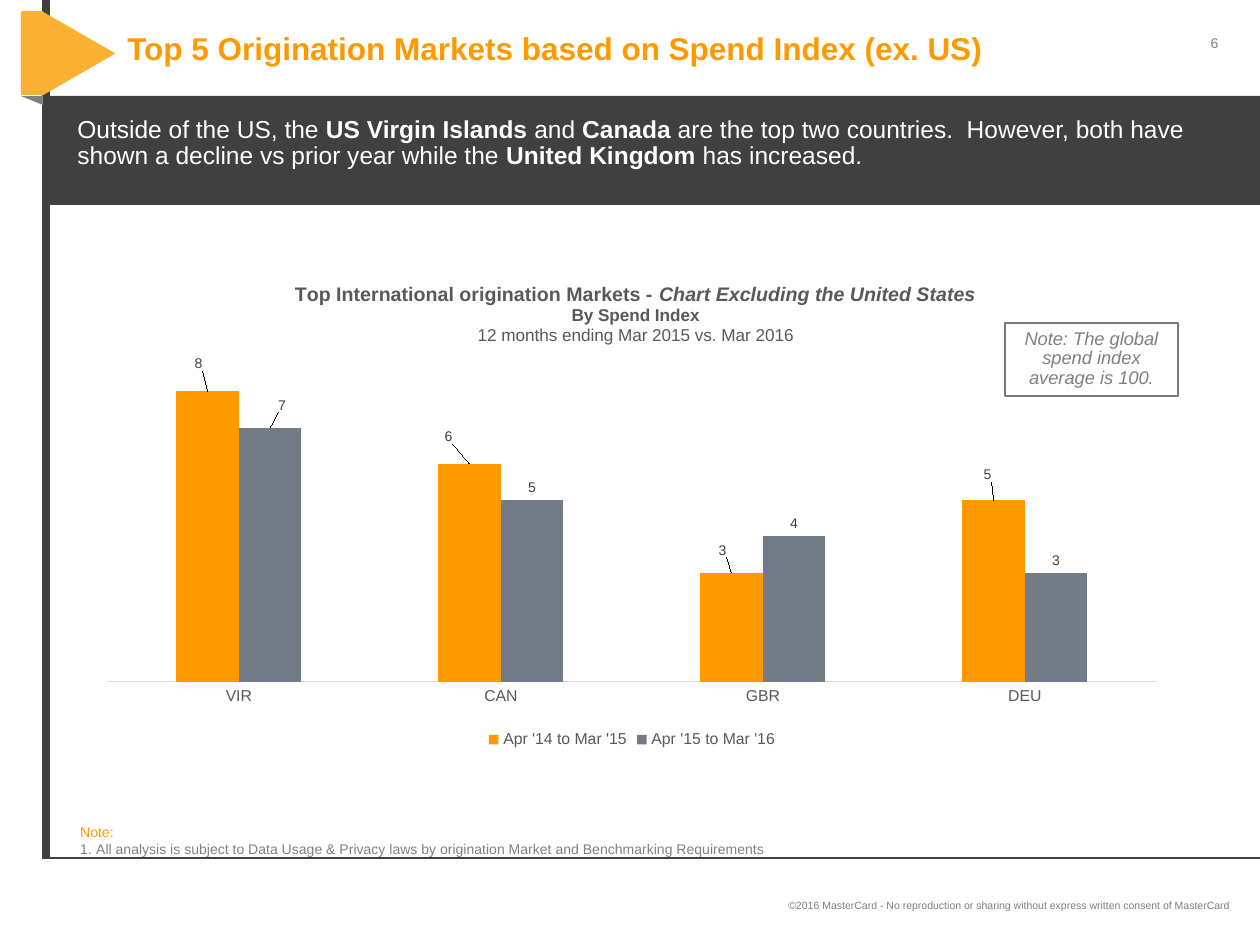
from pptx import Presentation
from pptx.chart.data import CategoryChartData
from pptx.dml.color import RGBColor
from pptx.enum.chart import XL_CHART_TYPE, XL_LABEL_POSITION, XL_LEGEND_POSITION, XL_TICK_MARK
from pptx.enum.shapes import MSO_CONNECTOR, MSO_SHAPE
from pptx.enum.text import MSO_ANCHOR, PP_ALIGN
from pptx.oxml import parse_xml
from pptx.oxml.ns import nsdecls, qn
from pptx.util import Emu, Pt

COLUMNS = XL_CHART_TYPE.COLUMN_CLUSTERED
OUTSIDE_END = XL_LABEL_POSITION.OUTSIDE_END
LEGEND_BOTTOM = XL_LEGEND_POSITION.BOTTOM
NO_TICKS = XL_TICK_MARK.NONE
STRAIGHT = MSO_CONNECTOR.STRAIGHT
RECTANGLE = MSO_SHAPE.RECTANGLE
ROUNDED = MSO_SHAPE.ROUNDED_RECTANGLE
TRIANGLE = MSO_SHAPE.ISOSCELES_TRIANGLE
RIGHT_TRIANGLE = MSO_SHAPE.RIGHT_TRIANGLE
TOP, MIDDLE, BOTTOM = MSO_ANCHOR.TOP, MSO_ANCHOR.MIDDLE, MSO_ANCHOR.BOTTOM
LEFT, CENTER, RIGHT = PP_ALIGN.LEFT, PP_ALIGN.CENTER, PP_ALIGN.RIGHT

PX_PER_INCH = 126
FONT = "Arial"
ORANGE, AMBER, SLATE = "FF9900", "FCB133", "737C86"
DARK, GRAY, TEXT_GRAY, WHITE = "404040", "808080", "595959", "FFFFFF"


def px(length):
    return Emu(round(length * 914400 / PX_PER_INCH))


def color(value):
    return RGBColor.from_string(value)


def style_font(font, size, font_color, bold=False, italic=False):
    font.name, font.size = FONT, Pt(size)
    font.bold, font.italic = bold, italic
    font.color.rgb = color(font_color)


def manual_layout(**values):
    """Chart layout from fractions; x and y alone give an offset or a corner."""
    parts = "".join(f'<c:{name} val="{value}"/>' for name, value in values.items())
    return parse_xml(f'<c:layout {nsdecls("c")}><c:manualLayout>{parts}</c:manualLayout></c:layout>')


class SlideBuilder:
    def __init__(self, slide):
        self.slide = slide

    def shape(self, kind, box, fill=None, line=None, rotation=0):
        shape = self.slide.shapes.add_shape(kind, *map(px, box))
        shape.shadow.inherit = False
        shape.rotation = rotation
        if fill:
            shape.fill.solid()
            shape.fill.fore_color.rgb = color(fill)
        else:
            shape.fill.background()
        if line:
            shape.line.color.rgb = color(line)
            shape.line.width = Pt(0.75)
        else:
            shape.line.fill.background()
        return shape

    def line(self, start, end, line_color):
        connector = self.slide.shapes.add_connector(STRAIGHT, *map(px, start + end))
        connector.line.color.rgb = color(line_color)
        connector.line.width = Pt(0.75)
        connector._element.spPr.append(parse_xml(f'<a:effectLst {nsdecls("a")}/>'))

    def text_box(self, box, *paragraphs, wrap=True, **style):
        text_box = self.slide.shapes.add_textbox(*map(px, box))
        self.fill_text(text_box.text_frame, *paragraphs, **style)
        text_box.text_frame.word_wrap = wrap

    def fill_text(self, frame, *paragraphs, anchor=TOP, align=LEFT, spacing=None):
        """Each paragraph is a list of runs: (text, size, color, bold, italic)."""
        frame.vertical_anchor = anchor
        for index, runs in enumerate(paragraphs):
            paragraph = frame.add_paragraph() if index else frame.paragraphs[0]
            paragraph.alignment = align
            if spacing:
                paragraph.line_spacing = spacing
            for text, *font_style in runs:
                run = paragraph.add_run()
                run.text = text
                style_font(run.font, *font_style)

    def number(self, paragraph, hanging):
        properties = paragraph._p.get_or_add_pPr()
        properties.set("marL", str(px(hanging)))
        properties.set("indent", str(-px(hanging)))
        properties.append(parse_xml(f'<a:buAutoNum {nsdecls("a")} type="arabicPeriod"/>'))

    def column_chart(self, box, categories, series, title, title_corner, plot_box, label_shifts):
        """Shifts move value labels, in px, from their place above the column."""
        left, top, width, height = box
        data = CategoryChartData()
        data.categories = categories
        for name, values, _ in series:
            data.add_series(name, values)
        chart = self.slide.shapes.add_chart(COLUMNS, *map(px, box), data).chart
        style_font(chart.font, 10, "000000")

        chart.has_title = True
        self.fill_text(chart.chart_title.text_frame, *title, align=CENTER)
        chart.has_legend = True
        chart.legend.position = LEGEND_BOTTOM
        chart.legend.include_in_layout = False
        style_font(chart.legend.font, 9, TEXT_GRAY)

        value_axis, category_axis = chart.value_axis, chart.category_axis
        value_axis.minimum_scale, value_axis.maximum_scale = 0, 9
        value_axis.has_major_gridlines = False
        value_axis.visible = False
        category_axis.major_tick_mark = NO_TICKS
        category_axis.format.line.color.rgb = color("D9D9D9")
        category_axis.format.line.width = Pt(0.75)
        style_font(category_axis.tick_labels.font, 9, TEXT_GRAY)

        plot = chart.plots[0]
        plot.vary_by_categories = False
        plot.gap_width, plot.overlap = 219, 0
        for column, (_, _, fill), shifts in zip(plot.series, series, label_shifts):
            column.format.fill.solid()
            column.format.fill.fore_color.rgb = color(fill)
            labels = column.data_labels
            labels.show_value = True
            labels.position = OUTSIDE_END
            style_font(labels.font, 8, DARK)
            for point, (right, down) in shifts.items():
                label = column.points[point].data_label
                style_font(label.font, 8, DARK)
                label.position = OUTSIDE_END
                index = column._element.xpath(f"c:dLbls/c:dLbl/c:idx[@val='{point}']")[0]
                index.addnext(manual_layout(x=round(right / width, 4), y=round(down / height, 4)))

        def replace_layout(element, layout, after):
            for old in element.findall(qn("c:layout")):
                element.remove(old)
            if after is None:
                element.insert(0, layout)
            else:
                after.addnext(layout)

        x, y = title_corner
        title_element = chart.element.xpath("c:chart/c:title")[0]
        replace_layout(title_element, manual_layout(
            xMode="edge", yMode="edge", x=round((x - left) / width, 4),
            y=round((y - top) / height, 4)), title_element.find(qn("c:tx")))
        x, y, plot_width, plot_height = plot_box
        replace_layout(chart.element.xpath("c:chart/c:plotArea")[0], manual_layout(
            layoutTarget="inner", xMode="edge", yMode="edge",
            x=round((x - left) / width, 4), y=round((y - top) / height, 4),
            w=round(plot_width / width, 4), h=round(plot_height / height, 4)), None)


def main():
    presentation = Presentation()
    presentation.slide_width, presentation.slide_height = px(1260), px(945)
    builder = SlideBuilder(presentation.slides.add_slide(presentation.slide_layouts[6]))

    builder.text_box((1193, 28, 43, 30), [("6", 8, GRAY)], wrap=False, align=CENTER)
    builder.text_box(
        (14, 871, 1228, 68),
        [("©2016 MasterCard - No reproduction or sharing without express written consent of MasterCard", 6, GRAY)],
        anchor=MIDDLE, align=RIGHT)

    builder.shape(RECTANGLE, (42, 0, 8, 858), DARK)
    builder.shape(RIGHT_TRIANGLE, (21, 96, 22, 9), GRAY, rotation=180)
    builder.shape(TRIANGLE, (37, 17, 84, 73), AMBER, rotation=90)
    builder.shape(RECTANGLE, (21, 11, 22, 84), AMBER)
    builder.line((42, 858), (1260, 858), DARK)
    builder.shape(RECTANGLE, (50, 96, 1210, 109), DARK)

    builder.text_box((115, 11, 998, 84),
                     [("Top 5 Origination Markets based on Spend Index (ex. US)", 18, ORANGE, True)],
                     anchor=MIDDLE, spacing=Pt(16))
    summary = ("Outside of the US, the ", "US Virgin Islands ", "and ", "Canada",
               " are the top two countries.  However, both have shown a decline vs prior year while the ",
               "United Kingdom ", "has increased.")
    builder.text_box((65, 111, 1183, 67),
                     [(text, 14, WHITE, index % 2 == 1) for index, text in enumerate(summary)],
                     spacing=0.9)

    builder.column_chart(
        (86, 255, 1092, 499), ("VIR", "CAN", "GBR", "DEU"),
        [("Apr '14 to Mar '15", (8, 6, 3, 5), ORANGE), ("Apr '15 to Mar '16", (7, 5, 4, 3), SLATE)],
        title=[[("Top International origination Markets - ", 11.2, TEXT_GRAY, True),
                ("Chart Excluding the United States", 11.2, TEXT_GRAY, True, True)],
               [("By Spend Index", 9.8, TEXT_GRAY, True)],
               [("12 months ending Mar 2015 vs. Mar 2016", 9.8, TEXT_GRAY)]],
        title_corner=(291, 277), plot_box=(108, 355, 1048, 327),
        label_shifts=[{0: (-9, -15), 1: (-21, -15), 2: (-9, -10), 3: (-6, -13)}, {0: (12, -10)}])

    footnote = builder.shape(ROUNDED, (65, 808, 1162, 58)).text_frame
    builder.fill_text(
        footnote, [("Note:", 8, ORANGE)],
        [("All analysis is subject to Data Usage & Privacy laws by origination Market and Benchmarking Requirements",
          8, GRAY)], anchor=BOTTOM)
    builder.number(footnote.paragraphs[1], 16)
    index_note = builder.shape(RECTANGLE, (1005, 323, 173, 73), line="797979")
    builder.fill_text(index_note.text_frame,
                      [("Note: The global spend index average is 100.", 10.5, GRAY, False, True)],
                      align=CENTER, spacing=0.9)

    presentation.save("out.pptx")


if __name__ == "__main__":
    main()
